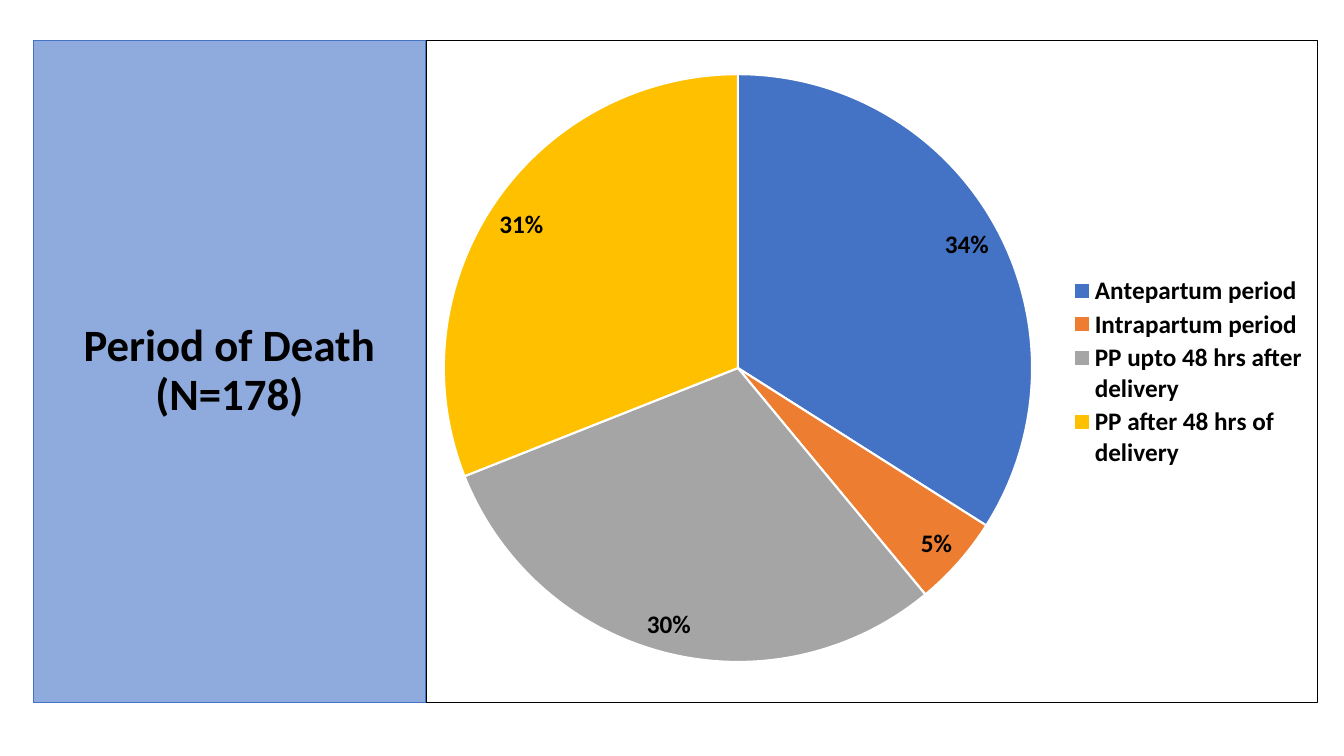
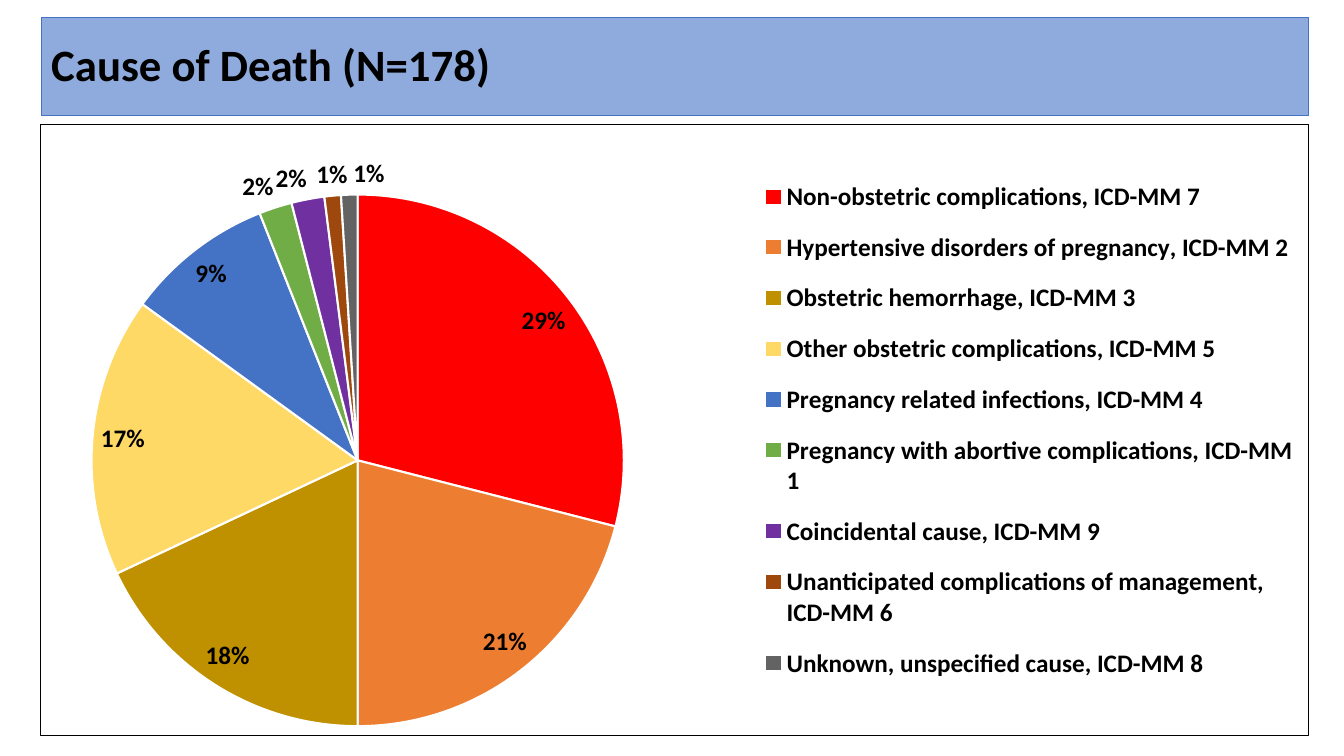
import lxml.etree
import pptx
import pptx.chart.data
import pptx.dml.color
import pptx.enum.chart
import pptx.enum.shapes
import pptx.enum.text
import pptx.oxml
import pptx.oxml.ns
import pptx.util

Inches = pptx.util.Inches
Pt = pptx.util.Pt
Align = pptx.enum.text.PP_ALIGN
Chart = pptx.enum.chart

COLORS = {
    "black": "000000", "white": "FFFFFF", "band": "8FAADC", "blue": "4472C4",
    "orange": "ED7D31", "gray": "A5A5A5", "gold": "FFC000", "red": "FF0000",
    "olive": "BF9000", "sand": "FFD966", "green": "70AD47", "purple": "7030A0",
    "brown": "9E480E", "slate": "636363",
}
TITLE = {"name": "Calibri", "size": Pt(32), "bold": True}
LABEL = {"name": "Calibri", "size": Pt(18), "bold": True}
FRAME = {"word_wrap": True, "vertical_anchor": pptx.enum.text.MSO_ANCHOR.MIDDLE}
LEGEND = {"position": Chart.XL_LEGEND_POSITION.RIGHT, "include_in_layout": False}
TAGS = {
    "number_format": "0%",
    "number_format_is_linked": False,
    "show_value": True,
    "position": Chart.XL_LABEL_POSITION.BEST_FIT,
}

PERIODS = [
    ("Antepartum period", 0.34, "blue"),
    ("Intrapartum period", 0.05, "orange"),
    ("PP upto 48 hrs after delivery", 0.3, "gray"),
    ("PP after 48 hrs of delivery", 0.31, "gold"),
]
CAUSES = [
    ("Non-obstetric complications, ICD-MM 7", 0.29, "red"),
    ("Hypertensive disorders of pregnancy, ICD-MM 2", 0.21, "orange"),
    ("Obstetric hemorrhage, ICD-MM 3", 0.18, "olive"),
    ("Other obstetric complications, ICD-MM 5", 0.17, "sand"),
    ("Pregnancy related infections, ICD-MM 4", 0.09, "blue"),
    ("Pregnancy with abortive complications, ICD-MM 1", 0.02, "green"),
    ("Coincidental cause, ICD-MM 9", 0.02, "purple"),
    ("Unanticipated complications of management, ICD-MM 6", 0.01, "brown"),
    ("Unknown, unspecified cause, ICD-MM 8", 0.01, "slate"),
]


def tint(name):
    return pptx.dml.color.RGBColor.from_string(COLORS[name])


def apply(thing, values):
    for name, value in values.items():
        setattr(thing, name, value)


def style(font, values):
    apply(font, values)
    font.color.rgb = tint("black")


def paint(form, fill, line, width):
    form.fill.solid()
    form.fill.fore_color.rgb = tint(fill)
    form.line.color.rgb = tint(line)
    form.line.width = Pt(width)


def add_band(slide, box, text, align):
    band = slide.shapes.add_shape(
        pptx.enum.shapes.MSO_SHAPE.RECTANGLE, *map(Inches, box))
    band.shadow.inherit = False
    paint(band, "band", "blue", 0.75)
    frame = band.text_frame
    apply(frame, FRAME)
    frame.text = text
    for line in frame.paragraphs:
        apply(line, {"alignment": align, "line_spacing": 0.9})
        style(line.runs[0].font, TITLE)


def place(node, index, box, inner):
    for old in node.findall(pptx.oxml.ns.qn("c:layout")):
        node.remove(old)
    parts = [("layoutTarget", "inner")] if inner else []
    parts += [("xMode", "edge"), ("yMode", "edge")] + list(zip("xywh", box))
    body = "".join(f'<c:{tag} val="{value}"/>' for tag, value in parts)
    node.insert(index, pptx.oxml.parse_xml(
        f'<c:layout {pptx.oxml.ns.nsdecls("c")}><c:manualLayout>{body}'
        "</c:manualLayout></c:layout>"))


def outline(root):
    border = pptx.oxml.parse_xml(
        f'<c:spPr {pptx.oxml.ns.nsdecls("c", "a")}><a:noFill/>'
        f'<a:ln w="{Pt(0.75)}"><a:solidFill><a:srgbClr val="{COLORS["black"]}"/>'
        "</a:solidFill></a:ln></c:spPr>")
    root.find(pptx.oxml.ns.qn("c:chart")).addnext(border)


def add_pie(slide, box, rows, plot_box, key_box):
    names, values, fills = zip(*rows)
    data = pptx.chart.data.CategoryChartData(number_format="0%")
    data.categories = names
    data.add_series("Series 1", values)
    chart = slide.shapes.add_chart(
        Chart.XL_CHART_TYPE.PIE, *map(Inches, box), data).chart
    apply(chart, {"has_title": False, "has_legend": True})
    apply(chart.legend, LEGEND)
    plot = chart.plots[0]
    apply(plot, {"vary_by_categories": True, "has_data_labels": True})
    apply(plot.data_labels, TAGS)
    for part in (chart, chart.legend, plot.data_labels):
        style(part.font, LABEL)
    for index, fill in enumerate(fills):
        paint(plot.series[0].points[index].format, fill, "white", 1.5)
    root = chart.element
    outline(root)
    place(root.find(".//" + pptx.oxml.ns.qn("c:plotArea")), 0, plot_box, True)
    place(root.find(".//" + pptx.oxml.ns.qn("c:legend")), 1, key_box, False)


def main():
    deck = pptx.Presentation()
    apply(deck, {"slide_width": Inches(13.33), "slide_height": Inches(7.5)})
    blank = deck.slide_layouts[6]

    period = deck.slides.add_slide(blank)
    add_pie(period, (4.22, 0.4, 8.85, 6.57), PERIODS,
            (0.02, 0.05, 0.66, 0.89), (0.72, 0.35, 0.27, 0.3))
    add_band(period, (0.33, 0.4, 3.89, 6.57),
             "Period of Death\n(N=178)", Align.CENTER)

    cause = deck.slides.add_slide(blank)
    add_pie(cause, (0.4, 1.23, 12.58, 6.07), CAUSES,
            (0.04, 0.11, 0.42, 0.88), (0.57, 0.06, 0.42, 0.88))
    add_band(cause, (0.41, 0.17, 12.57, 0.98),
             "Cause of Death (N=178)", Align.LEFT)

    deck.save("out.pptx")


if __name__ == "__main__":
    main()
